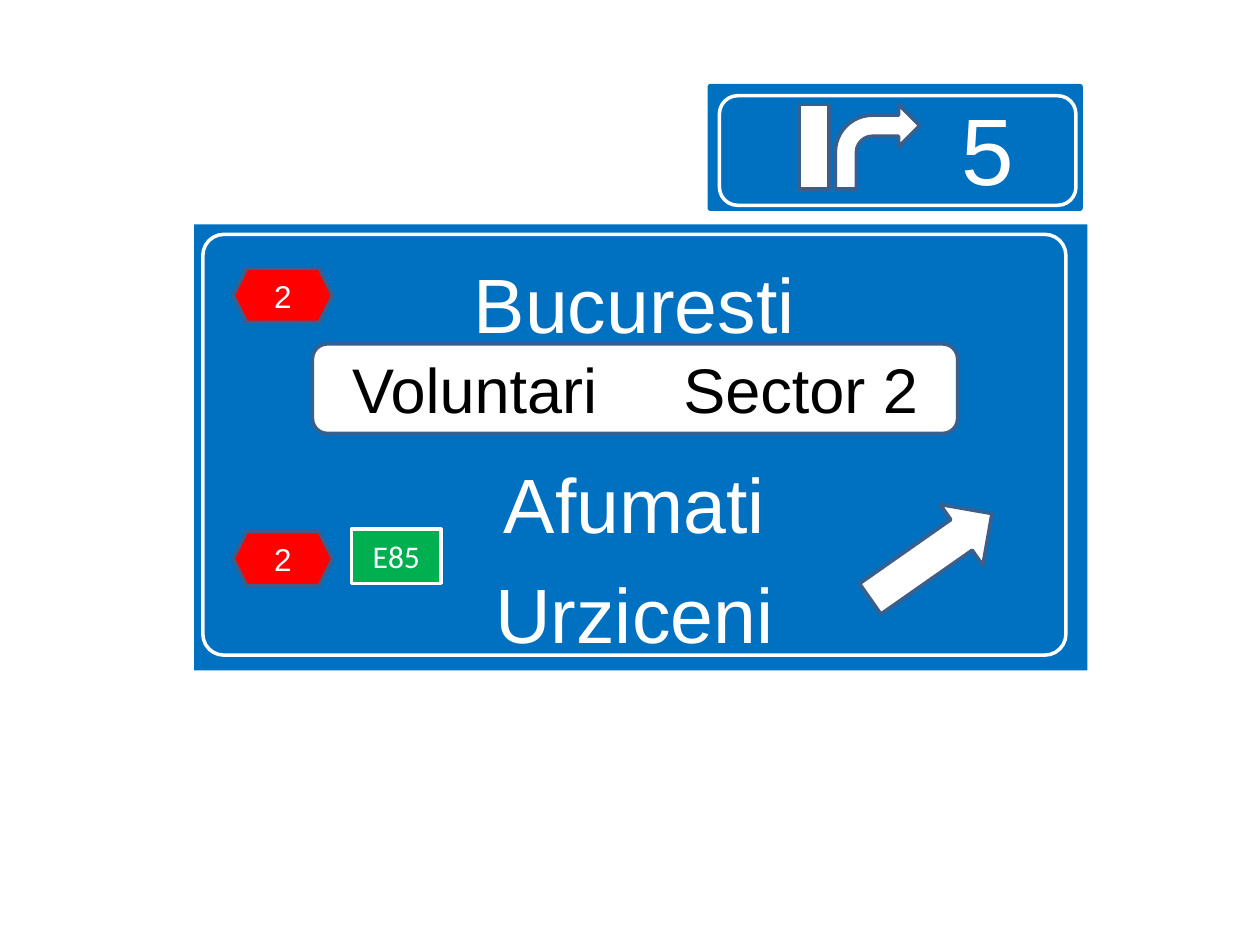
from lxml import etree
from pptx import Presentation
from pptx.dml.color import RGBColor
from pptx.enum.shapes import MSO_SHAPE as Shape
from pptx.enum.text import MSO_ANCHOR as Anchor, MSO_AUTO_SIZE as AutoSize, PP_ALIGN as Align
from pptx.oxml.ns import qn
from pptx.util import Inches, Pt

COLORS = {"blue": "0070C0", "edge": "3A5F8C", "red": "FF0000",
          "green": "00B050", "white": "FFFFFF", "black": "000000"}

prs = Presentation()
prs.slide_width, prs.slide_height = Inches(10), Inches(7.5)
slide = prs.slides.add_slide(prs.slide_layouts[0])
heading = slide.shapes.title
heading.element.getparent().remove(heading.element)


def place(box):
    """Turn percentages of the slide (left, top, width, height) into lengths."""
    sides = (prs.slide_width, prs.slide_height) * 2
    return [round(share / 100 * side) for share, side in zip(box, sides)]


def write(shape, text, size, color="white", font="Arial", align=Align.CENTER):
    shape.text_frame.text = text
    for paragraph in shape.text_frame.paragraphs:
        paragraph.alignment = align
        for run in paragraph.runs:
            run.font.size, run.font.name = Pt(size), font
            run.font.color.rgb = RGBColor.from_string(COLORS[color])


# Main sign with its destinations
sign = slide.placeholders[1]
sign.left, sign.top, sign.width, sign.height = place((15.4, 23.73, 70.9, 47.2))
sign.fill.solid()
sign.fill.fore_color.rgb = RGBColor.from_string(COLORS["blue"])
write(sign, "Bucuresti\nAfumati\nUrziceni", 44)
destinations = sign.text_frame
destinations.auto_size = AutoSize.NONE
destinations.vertical_anchor = Anchor.TOP
destinations.margin_left, destinations.margin_top = 0, Inches(0.26)
for paragraph, gap in zip(destinations.paragraphs, (0, 61, 10.5)):
    paragraph.space_before = Pt(gap)

# Panels, arrows and road numbers: kind, box, fill, line, adjustments
PARTS = {
    "slip road": (Shape.RIGHT_ARROW, (68, 54.93, 11.8, 7.87), "white", "edge", ()),
    "upper road": (Shape.HEXAGON, (18.5, 28.4, 7.9, 5.73), "red", "edge", ()),
    "districts": (Shape.ROUNDED_RECTANGLE, (24.8, 36.4, 51.2, 9.47), "white", "edge", ()),
    "lower road": (Shape.HEXAGON, (18.5, 56.27, 7.9, 5.73), "red", "edge", ()),
    "euro road": (Shape.RECTANGLE, (27.9, 56, 7.1, 5.73), "green", "white", ()),
    "exit": (Shape.ROUNDED_RECTANGLE, (56.3, 9.07, 29.5, 13.07), "blue", "blue", (0.01,)),
    "exit frame": (Shape.ROUNDED_RECTANGLE, (57.1, 10.13, 28.3, 11.6), None, "white", ()),
    "through lane": (Shape.RECTANGLE, (63.4, 11.07, 2.4, 8.93), "white", "edge", ()),
    "exit lane": (Shape.BENT_ARROW, (66.3, 11.07, 6.7, 8.93), "white", "edge",
                  (0.25, 0.25, 0.25, 0.44)),
    "sign frame": (Shape.ROUNDED_RECTANGLE, (16.1, 24.8, 68.5, 44.53), None, "white", (0.05,)),
}
parts = {}
for name, (kind, box, fill, line, adjustments) in PARTS.items():
    part = parts[name] = slide.shapes.add_shape(kind, *place(box))
    part.shadow.inherit = False
    if fill:
        part.fill.solid()
        part.fill.fore_color.rgb = RGBColor.from_string(COLORS[fill])
    else:
        part.fill.background()
    part.line.color.rgb = RGBColor.from_string(COLORS[line])
    part.line.width = Pt(2)
    part.text_frame.vertical_anchor = Anchor.MIDDLE
    for i, value in enumerate(adjustments):
        part.adjustments[i] = value

parts["slip road"].rotation = 325
for road in ("upper road", "lower road"):
    write(parts[road], "2", 18)
write(parts["euro road"], "E85", 18, font="Calibri")
write(parts["exit"], "5", 54)
parts["exit"].text_frame.margin_left = Inches(1.57)

# The two districts stand side by side, parted by a tab stop
write(parts["districts"], "Voluntari\tSector 2", 36, "black", align=Align.LEFT)
districts = parts["districts"].text_frame
districts.margin_left = Inches(0.28)
tabs = etree.SubElement(districts.paragraphs[0]._p.get_or_add_pPr(), qn("a:tabLst"))
etree.SubElement(tabs, qn("a:tab"), pos=str(Inches(2.63)), algn="l")

prs.save("out.pptx")
